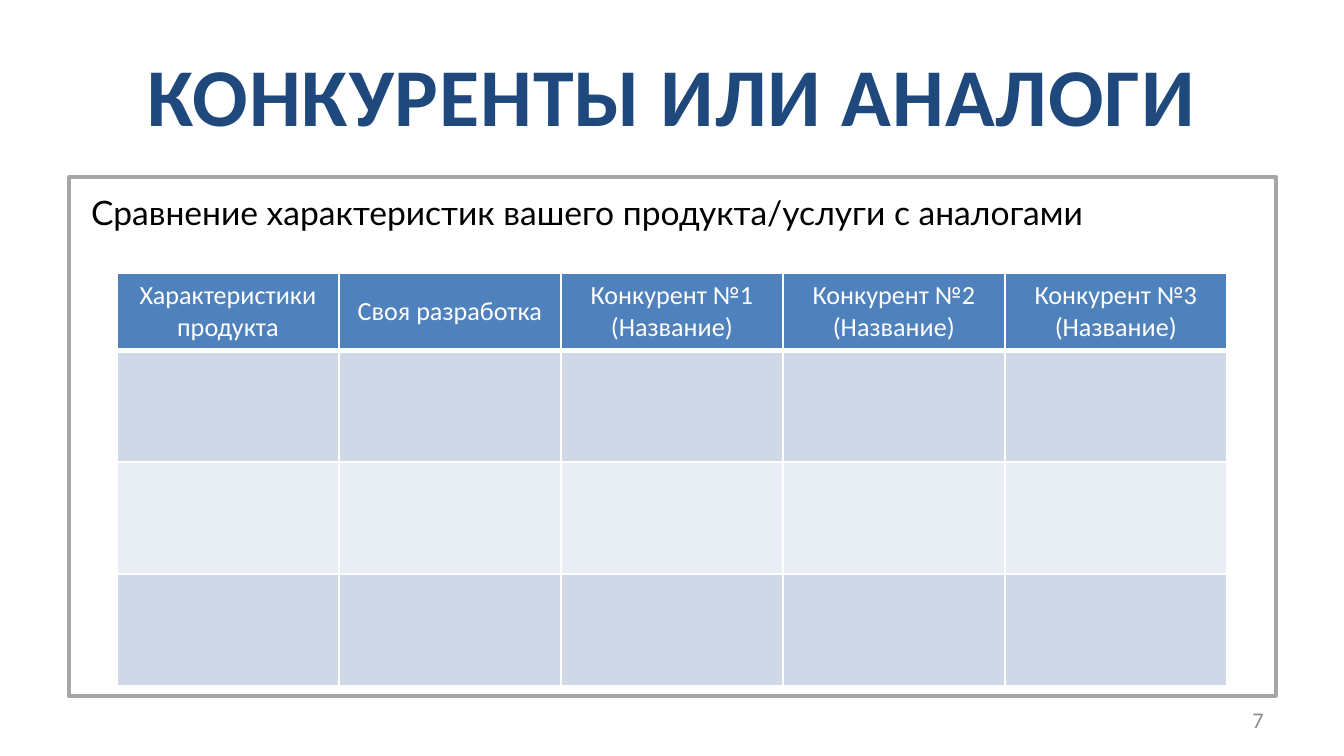
from dataclasses import dataclass

from lxml import etree
from pptx import Presentation
from pptx.dml.color import RGBColor
from pptx.enum.shapes import MSO_SHAPE
from pptx.enum.text import MSO_ANCHOR, PP_ALIGN
from pptx.oxml.ns import qn
from pptx.util import Emu, Pt

RECTANGLE = MSO_SHAPE.RECTANGLE
TOP, MIDDLE = MSO_ANCHOR.TOP, MSO_ANCHOR.MIDDLE
LEFT, CENTER, RIGHT = PP_ALIGN.LEFT, PP_ALIGN.CENTER, PP_ALIGN.RIGHT

EMU_PER_PX = 914400 / 134.4
WHITE = RGBColor(0xFF, 0xFF, 0xFF)
BLACK = RGBColor(0x00, 0x00, 0x00)
NAVY = RGBColor(0x1F, 0x49, 0x7D)
BLUE = RGBColor(0x4F, 0x81, 0xBD)
BAND_DARK = RGBColor(0xD0, 0xD8, 0xE8)
BAND_LIGHT = RGBColor(0xE9, 0xED, 0xF4)
FRAME_GRAY = RGBColor(0xA6, 0xA6, 0xA6)
NUMBER_GRAY = RGBColor(0x8C, 0x8C, 0x8C)

HEADERS = [
    "Характеристики продукта",
    "Своя разработка",
    *(f"Конкурент №{number} (Название)" for number in (1, 2, 3)),
]
BANDS = [BAND_DARK, BAND_LIGHT, BAND_DARK]
COLUMN_WIDTH, HEADER_HEIGHT, ROW_HEIGHT = 222, 76, 112


@dataclass
class Box:
    left: int
    top: int
    width: int
    height: int

    def emu(self) -> list[Emu]:
        return [px(value) for value in (self.left, self.top, self.width, self.height)]


@dataclass
class Label:
    text: str
    box: Box
    font: dict
    align: PP_ALIGN
    anchor: MSO_ANCHOR = MIDDLE
    margins: bool = True
    line_spacing: float | None = None
    letter_spacing: int = 0


LABELS = [
    Label("КОНКУРЕНТЫ ИЛИ АНАЛОГИ", Box(67, 31, 1210, 126),
          {"name": "Calibri", "size": Pt(44), "bold": True, "color": NAVY},
          CENTER, letter_spacing=50),
    Label("7", Box(964, 700, 313, 40),
          {"name": "Calibri", "size": Pt(12), "color": NUMBER_GRAY}, RIGHT),
    Label("Сравнение характеристик вашего продукта/услуги с аналогами",
          Box(91, 161, 1185, 63),
          {"name": "Lato", "size": Pt(18), "color": BLACK},
          LEFT, TOP, margins=False, line_spacing=38.1),
]


def px(value: int) -> Emu:
    return Emu(round(value * EMU_PER_PX))


def set_font(font, values: dict) -> None:
    for name, value in values.items():
        if name == "color":
            font.color.rgb = value
        else:
            setattr(font, name, value)


def add_label(slide, label: Label) -> None:
    frame = slide.shapes.add_textbox(*label.box.emu()).text_frame
    frame.word_wrap = True
    frame.vertical_anchor = label.anchor
    if not label.margins:
        for side in ("left", "top", "right", "bottom"):
            setattr(frame, f"margin_{side}", 0)
    paragraph = frame.paragraphs[0]
    paragraph.alignment = label.align
    if label.line_spacing:
        paragraph.line_spacing = Pt(label.line_spacing)
    run = paragraph.add_run()
    run.text = label.text
    set_font(run.font, label.font)
    if label.letter_spacing:
        run.font._element.set("spc", str(label.letter_spacing))


def add_frame(slide, box: Box) -> None:
    shape = slide.shapes.add_shape(RECTANGLE, *box.emu())
    shape.shadow.inherit = False
    shape.fill.solid()
    shape.fill.fore_color.rgb = WHITE
    color = shape.fill._xPr.find(f"{qn('a:solidFill')}/{qn('a:srgbClr')}")
    etree.SubElement(color, qn("a:alpha"), val="84000")
    shape.line.color.rgb = FRAME_GRAY
    shape.line.width = Pt(2)


def style_cell(cell, fill: RGBColor, bottom_width: int) -> None:
    properties = cell._tc.get_or_add_tcPr()
    # Borders come before the fill in the cell properties
    for tag, width in {"lnL": 1, "lnR": 1, "lnT": 1, "lnB": bottom_width}.items():
        line = etree.SubElement(properties, qn(f"a:{tag}"), w=str(Pt(width)))
        solid = etree.SubElement(line, qn("a:solidFill"))
        etree.SubElement(solid, qn("a:srgbClr"), val=str(WHITE))
    cell.fill.solid()
    cell.fill.fore_color.rgb = fill


def add_comparison_table(slide, left: int, top: int) -> None:
    heights = [HEADER_HEIGHT] + [ROW_HEIGHT] * len(BANDS)
    box = Box(left, top, COLUMN_WIDTH * len(HEADERS), sum(heights))
    table = slide.shapes.add_table(len(heights), len(HEADERS), *box.emu()).table
    for column in table.columns:
        column.width = px(COLUMN_WIDTH)
    for row, height, fill in zip(table.rows, heights, [BLUE, *BANDS]):
        row.height = px(height)
        for cell in row.cells:
            style_cell(cell, fill, 3 if fill == BLUE else 1)
    for cell, text in zip(table.rows[0].cells, HEADERS):
        cell.vertical_anchor = MIDDLE
        paragraph = cell.text_frame.paragraphs[0]
        paragraph.alignment = CENTER
        run = paragraph.add_run()
        run.text = text
        set_font(run.font, {"name": "Calibri", "size": Pt(14), "bold": False,
                            "color": WHITE})


def main() -> None:
    presentation = Presentation()
    presentation.slide_width, presentation.slide_height = px(1344), px(756)
    slide = presentation.slides.add_slide(presentation.slide_layouts[6])

    # Frame and table
    add_frame(slide, Box(69, 177, 1207, 519))
    add_comparison_table(slide, 117, 273)

    # Title, page number and subtitle
    for label in LABELS:
        add_label(slide, label)

    presentation.save("out.pptx")


if __name__ == "__main__":
    main()
